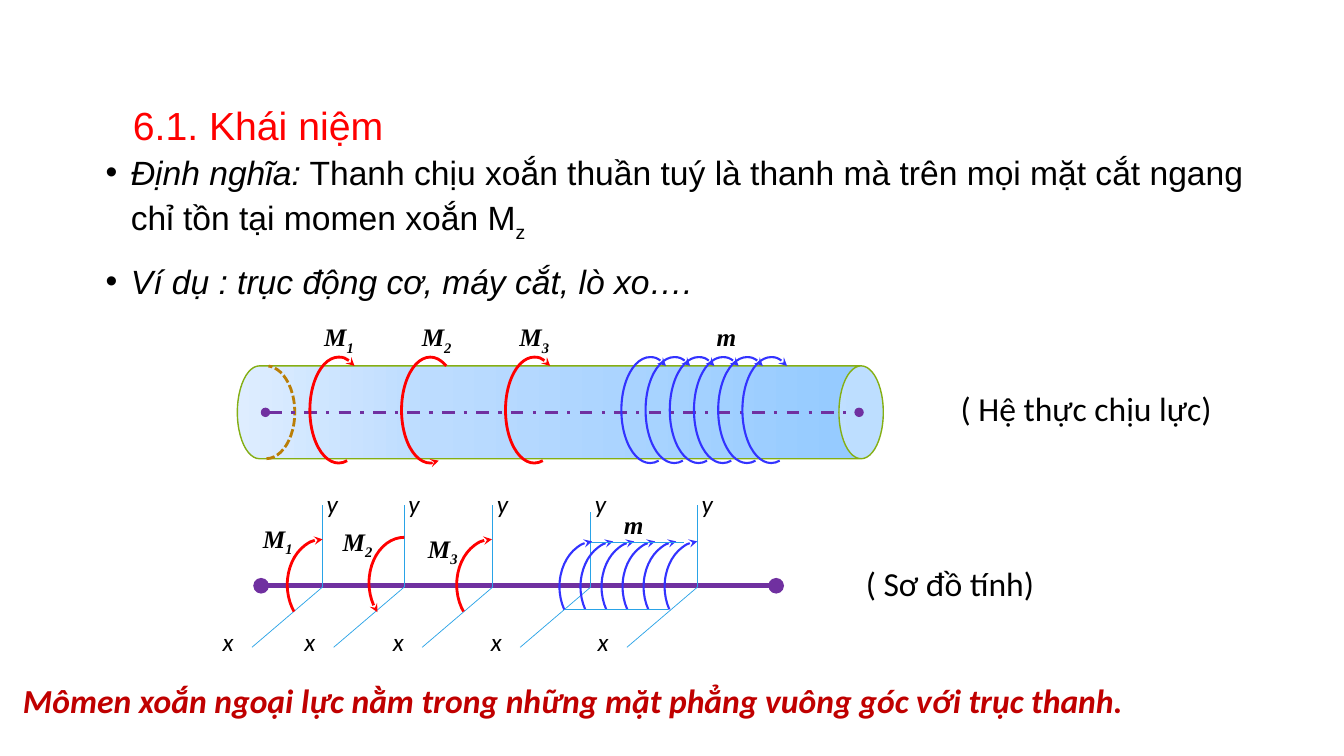
from copy import deepcopy

from lxml import etree
from pptx import Presentation
from pptx.dml.color import RGBColor
from pptx.enum import dml, shapes, text
from pptx.oxml import ns
from pptx.util import Cm, Pt

RED = RGBColor(0xFF, 0x00, 0x00)
DARK_RED = RGBColor(0xC0, 0x00, 0x00)
BLACK = RGBColor(0x00, 0x00, 0x00)
BLUE = RGBColor(0x33, 0x33, 0xFF)
PURPLE = RGBColor(0x70, 0x30, 0xA0)
GREEN = RGBColor(0x85, 0xAF, 0x13)
BROWN = RGBColor(0xBA, 0x7E, 0x06)
SKY = RGBColor(0x29, 0xA3, 0xE7)
BAR_STOPS = [
    (0, RGBColor(0x92, 0xC9, 0xFF)),
    (0.7, RGBColor(0xBC, 0xDC, 0xFF)),
    (1, RGBColor(0xDE, 0xED, 0xFF)),
]


def add_text(parent, box, paragraphs, size, font="Calibri", color=BLACK, bold=False, align=None):
    """Add a text box; each paragraph is a list of (words, italic, subscript) runs."""
    sp = parent.shapes.add_textbox(*map(Cm, box))
    tf = sp.text_frame
    tf.word_wrap = True
    for i, runs in enumerate(paragraphs):
        p = tf.paragraphs[0] if i == 0 else tf.add_paragraph()
        p.alignment = align
        for words, italic, subscript in runs:
            r = p.add_run()
            r.text = words
            f = r.font
            f.name, f.size, f.bold, f.italic = font, Pt(size), bold, italic
            f.color.rgb = color
            if subscript:
                r._r.get_or_add_rPr().set("baseline", "-25000")
    return sp


def add_moment_label(parent, x, y, w, letter, index=""):
    """Add a centred moment symbol with an optional subscript."""
    runs = [(letter, True, False)] + ([(index, True, True)] if index else [])
    add_text(parent, (x, y, w, 1.02), [runs], 18, "Times New Roman",
             bold=True, align=text.PP_ALIGN.CENTER)


def style_line(sp, color, width, dash=None, head=None, tail=None):
    """Set colour, width, dash and line ends of a shape or connector."""
    line = sp.line
    line.color.rgb, line.width = color, Pt(width)
    if dash:
        line.dash_style = dash
    for tag, kind in (("a:headEnd", head), ("a:tailEnd", tail)):
        if kind:
            etree.SubElement(line._get_or_add_ln(), ns.qn(tag), type=kind)


def add_line(parent, x1, y1, x2, y2, color, width, **ends):
    """Add a straight line without a shadow."""
    c = parent.shapes.add_connector(shapes.MSO_CONNECTOR.STRAIGHT, Cm(x1), Cm(y1), Cm(x2), Cm(y2))
    style_line(c, color, width, **ends)
    etree.SubElement(c._element.spPr, ns.qn("a:effectLst"))


def add_arc(parent, box, angles, color, width, **ends):
    """Add an arc mirrored left to right."""
    sp = parent.shapes.add_shape(shapes.MSO_SHAPE.ARC, *map(Cm, box))
    sp.adjustments[0], sp.adjustments[1] = angles
    sp._element.spPr.get_or_add_xfrm().set("flipH", "1")
    sp.fill.background()
    sp.shadow.inherit = False
    style_line(sp, color, width, **ends)


def add_bar(parent, x, y, length, depth):
    """Add the lying cylinder with its gradient."""
    sp = parent.shapes.add_shape(
        shapes.MSO_SHAPE.CAN, Cm(x + (length - depth) / 2), Cm(y + (depth - length) / 2),
        Cm(depth), Cm(length))
    sp.rotation = 90
    sp.adjustments[0] = 0.478
    sp.shadow.inherit = False
    sp.fill.gradient()
    sp.fill.gradient_angle = 270
    stops = sp._element.spPr.find(ns.qn("a:gradFill")).find(ns.qn("a:gsLst"))
    stops.append(deepcopy(stops[-1]))
    for stop, (position, color) in zip(sp.fill.gradient_stops, BAR_STOPS):
        stop.position, stop.color.rgb = position, color
    style_line(sp, GREEN, 1)


def add_definition(s, x, y, w, h):
    """Add the heading and the bulleted definition."""
    title = add_text(s, (x + 0.69, y, w - 2.14, 1.93), [[("6.1. Khái niệm", False, False)]],
                     28, "Arial", RED)
    title.text_frame.vertical_anchor = text.MSO_ANCHOR.MIDDLE
    title.text_frame.paragraphs[0].line_spacing = 0.9
    body = add_text(s, (x, y + 1.35, w, h - 1.35), [
        [("Định nghĩa:", True, False),
         (" Thanh chịu xoắn thuần tuý là thanh mà trên mọi mặt cắt ngang "
          "chỉ tồn tại momen xoắn M", False, False),
         ("z", False, True)],
        [("Ví dụ : trục động cơ, máy cắt, lò xo….", True, False)],
    ], 24, "Arial")
    for i, p in enumerate(body.text_frame.paragraphs):
        pPr = p._p.get_or_add_pPr()
        pPr.set("marL", str(Cm(0.64)))
        pPr.set("indent", str(-Cm(0.64)))
        etree.SubElement(pPr, ns.qn("a:buFont"), typeface="Arial")
        etree.SubElement(pPr, ns.qn("a:buChar"), char="•")
        p.line_spacing = 1.1
        p.space_before = Pt(10 if i else 0)


def add_loaded_bar(s, x, y, w, h):
    """Add the cylinder under concentrated and distributed moments."""
    g = s.shapes.add_group_shape()
    depth = 2.34
    bar_y = y + h - depth - 0.1
    angles = (150.1, 59.75)
    add_text(g, (x + 17.98, y + 1.68, 8.31, 1.27), [[("( Hệ thực chịu lực)", False, False)]], 24)
    add_bar(g, x, bar_y, w, depth)
    add_arc(g, (x, bar_y, 1.45, depth), (54.35, 160.11), BROWN, 2,
            dash=dml.MSO_LINE.SQUARE_DOT)
    add_line(g, x + 0.71, y + 2.41, x + 15.67, y + 2.41, PURPLE, 2.25,
             dash=dml.MSO_LINE.DASH_DOT, head="oval", tail="oval")
    for i, (dx, end) in enumerate([(1.83, "head"), (4.14, "tail"), (6.76, "head")]):
        add_arc(g, (x + dx, y + 1.02, 1.45, 2.67), angles, RED, 2, **{end: "stealth"})
        add_moment_label(g, x + 1.7 + 2.46 * i, y, 1.73, "M", str(i + 1))
    for i in range(6):
        add_arc(g, (x + 9.68 + 0.61 * i, y + 1.02, 1.45, 2.67), angles, BLUE, 1.5, head="stealth")
    add_moment_label(g, x + 11.46, y, 1.73, "m")


def add_section_axes(g, x, y, h, top):
    """Add the x and y axes of one cross-section."""
    add_line(g, x, y + 2.62, x - 1.78, y + h - 0.36, SKY, 0.5)
    add_line(g, x, y + top, x, y + 2.62, SKY, 0.5)
    for name, dx, dy in (("y", -0.15, 0), ("x", -2.77, h - 1.02)):
        add_text(g, (x + dx, y + dy, 0.61, 1.02), [[(name, True, False)]], 18)


def add_scheme(s, x, y, w, h):
    """Add the calculation scheme of the bar."""
    g = s.shapes.add_group_shape()
    add_text(g, (x + 16.21, y + 1.9, 7.19, 1.27), [[("( Sơ đồ tính)", False, False)]], 24)
    add_line(g, x + 1.22, y + 2.59, x + w, y + 2.59, PURPLE, 3.75, head="oval", tail="oval")
    for dx, top in ((2.77, 0.56), (4.83, 0.56), (7.06, 0.56), (9.53, 0.74), (12.22, 0.56)):
        add_section_axes(g, x + dx, y, h, top)
    moments = [(1.88, 1.42, 26, "head", 0.89, 0.89),
               (3.94, 1.37, 28.59, "tail", 2.9, 0.97),
               (6.15, 1.42, 26, "head", 5.05, 1.14)]
    for i, (dx, dy, angle, end, label_x, label_y) in enumerate(moments, 1):
        add_arc(g, (x + dx, y + dy, 1.78, 2.29), (162, angle), RED, 2, **{end: "stealth"})
        add_moment_label(g, x + label_x, y + label_y, 1.5, "M", str(i))
    for i in range(6):
        add_arc(g, (x + 8.74 + 0.53 * i, y + 1.47, 1.78, 2.29), (164, 22), BLUE, 1.5,
                head="stealth")
    add_line(g, x + 9.53, y + 1.49, x + 11.89, y + 1.49, SKY, 0.5)
    add_line(g, x + 8.89, y + 3.18, x + 11.48, y + 3.18, SKY, 0.5)
    add_moment_label(g, x + 9.86, y + 0.53, 1.5, "m")


def add_conclusion(s, x, y, w, h):
    """Add the closing statement."""
    add_text(s, (x, y, w, h), [[(
        "Mômen xoắn ngoại lực nằm trong những mặt phẳng vuông góc với trục thanh.", True, False)]],
        24, color=DARK_RED, bold=True)


def main():
    """Build the slide and save it."""
    prs = Presentation()
    prs.slide_width, prs.slide_height = Cm(33.87), Cm(19.05)
    s = prs.slides.add_slide(prs.slide_layouts[6])
    add_definition(s, 2.41, 2.26, 30.38, 6.1)
    add_conclusion(s, 0.33, 17.02, 33.02, 1.27)
    add_loaded_bar(s, 5.98, 7.98, 16.28, 3.68)
    add_scheme(s, 5.36, 12.17, 14.2, 4.5)
    prs.save("out.pptx")


if __name__ == "__main__":
    main()
